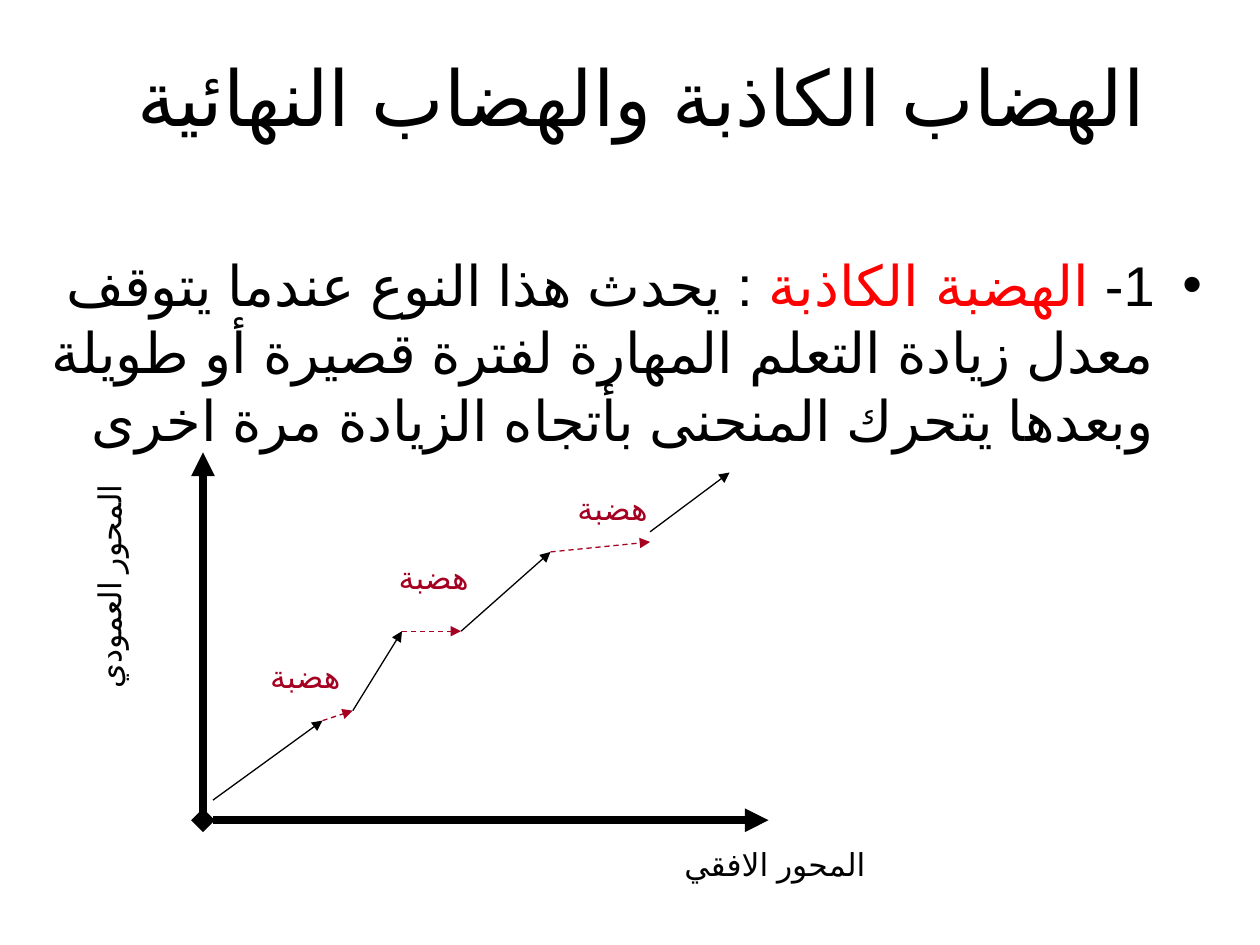
import dataclasses

import lxml.etree
import pptx
import pptx.dml.color
import pptx.enum.dml
import pptx.enum.lang
import pptx.enum.shapes
import pptx.enum.text
import pptx.oxml.ns
import pptx.util

Pt = pptx.util.Pt
Align = pptx.enum.text.PP_ALIGN


@dataclasses.dataclass(frozen=True)
class Theme:
    """Colours, font and sizes of the slide."""
    font: str = "Arial"
    ink: str = "000000"
    paper: str = "FFFFFF"
    key: str = "FF0000"
    flat: str = "A50021"
    title: float = 44
    body: float = 32
    label: float = 18
    axis: float = 4.5
    step: float = 0.75


THEME = Theme()


def color(code):
    """Turn a hex code into a colour."""
    return pptx.dml.color.RGBColor.from_string(code)


def child(parent, tag, **attrs):
    """Add a drawing element to a parent."""
    return lxml.etree.SubElement(parent, pptx.oxml.ns.qn(tag), attrs)


def text(slide, box, runs, size, align=Align.RIGHT, fill=None, bullet=None,
         indent=0, middle=False, turn=0):
    """Write one right-to-left paragraph of (text, colour) runs in a box."""
    shape = slide.shapes.add_textbox(*map(Pt, box))
    shape.rotation = turn
    if fill:
        shape.fill.solid()
        shape.fill.fore_color.rgb = color(fill)
    frame = shape.text_frame
    frame.word_wrap = True
    if middle:
        frame.vertical_anchor = pptx.enum.text.MSO_ANCHOR.MIDDLE
    para = frame.paragraphs[0]
    para.alignment = align
    props = para._p.get_or_add_pPr()
    props.set("rtl", "1")
    if bullet:
        props.set("marR", "0")
        props.set("marL", str(Pt(indent)))
        props.set("indent", str(-Pt(indent)))
        child(props, "a:buFont", typeface=THEME.font)
        child(props, "a:buChar", char=bullet)
    for words, tint in runs:
        run = para.add_run()
        run.text = words
        run.font.size = Pt(size)
        run.font.name = THEME.font
        run.font.color.rgb = color(tint)
        run.font.language_id = pptx.enum.lang.MSO_LANGUAGE_ID.ARABIC_IRAQ
        child(run.font._element, "a:cs", typeface=THEME.font)


def arrow(slide, start, end, tint, width, dash=False, tail=None):
    """Draw an arrow from start to end."""
    line = slide.shapes.add_connector(
        pptx.enum.shapes.MSO_CONNECTOR.STRAIGHT, *map(Pt, (*start, *end)))
    line.line.color.rgb = color(tint)
    line.line.width = Pt(width)
    if dash:
        line.line.dash_style = pptx.enum.dml.MSO_LINE.DASH
    pen = line.line._get_or_add_ln()
    if tail:
        child(pen, "a:headEnd", type=tail)
    child(pen, "a:tailEnd", type="triangle")
    child(line._element.spPr, "a:effectLst")


def heading(slide, box):
    """Place the slide title."""
    text(slide, box, [("الهضاب الكاذبة والهضاب النهائية ", THEME.ink)],
         THEME.title, align=Align.CENTER, fill=THEME.paper, middle=True)


def body(slide, box):
    """Place the bulleted definition."""
    runs = [
        ("1- ", THEME.ink),
        ("الهضبة الكاذبة", THEME.key),
        (" : يحدث هذا النوع عندما يتوقف معدل زيادة التعلم المهارة لفترة "
         "قصيرة أو طويلة وبعدها يتحرك المنحنى بأتجاه الزيادة مرة اخرى ",
         THEME.ink),
    ]
    text(slide, box, runs, THEME.body, fill=THEME.paper, bullet="•", indent=27)


def curve(slide, box):
    """Draw the axes, the stepped learning curve and its labels."""
    left, top, width, height = box

    def at(x, y):
        return left + x, top + y

    base = at(0, height)
    arrow(slide, base, at(0, 0), THEME.ink, THEME.axis)
    arrow(slide, base, at(width, height), THEME.ink, THEME.axis, tail="diamond")

    knots = [(5.7, 198.7), (68.3, 153.3), (85.6, 147.6), (113.7, 102.2),
             (147.5, 102.2), (198.6, 56.9), (255.5, 51.2)]
    for i, (start, end) in enumerate(zip(knots, knots[1:])):
        flat = i % 2 == 1
        arrow(slide, at(*start), at(*end), THEME.flat if flat else THEME.ink,
              THEME.step, dash=flat)
    arrow(slide, at(255.5, 45.4), at(300.9, 11.5), THEME.ink, THEME.step)

    for x, y in [(23, 113.7), (96.4, 56.9), (198.6, 17.3)]:
        text(slide, (*at(x, y), 62.6, 28.8), [("هضبة ", THEME.flat)],
             THEME.label)
    text(slide, (*at(-124.6, 67.7), 141.8, 28.8),
         [("المحور العمودي ", THEME.ink)], THEME.label, turn=270)
    text(slide, (*at(198.6, 221), 187.2, 28.8),
         [("المحور الافقي ", THEME.ink)], THEME.label)


def main():
    """Build and save the slide."""
    deck = pptx.Presentation()
    deck.slide_width, deck.slide_height = Pt(720), Pt(540)
    slide = deck.slides.add_slide(deck.slide_layouts[6])
    heading(slide, (36.7, 9.4, 648, 90))
    body(slide, (19.4, 139.7, 674.6, 360.7))
    curve(slide, (116, 258.5, 323.2, 210.2))
    deck.save("out.pptx")


if __name__ == "__main__":
    main()
